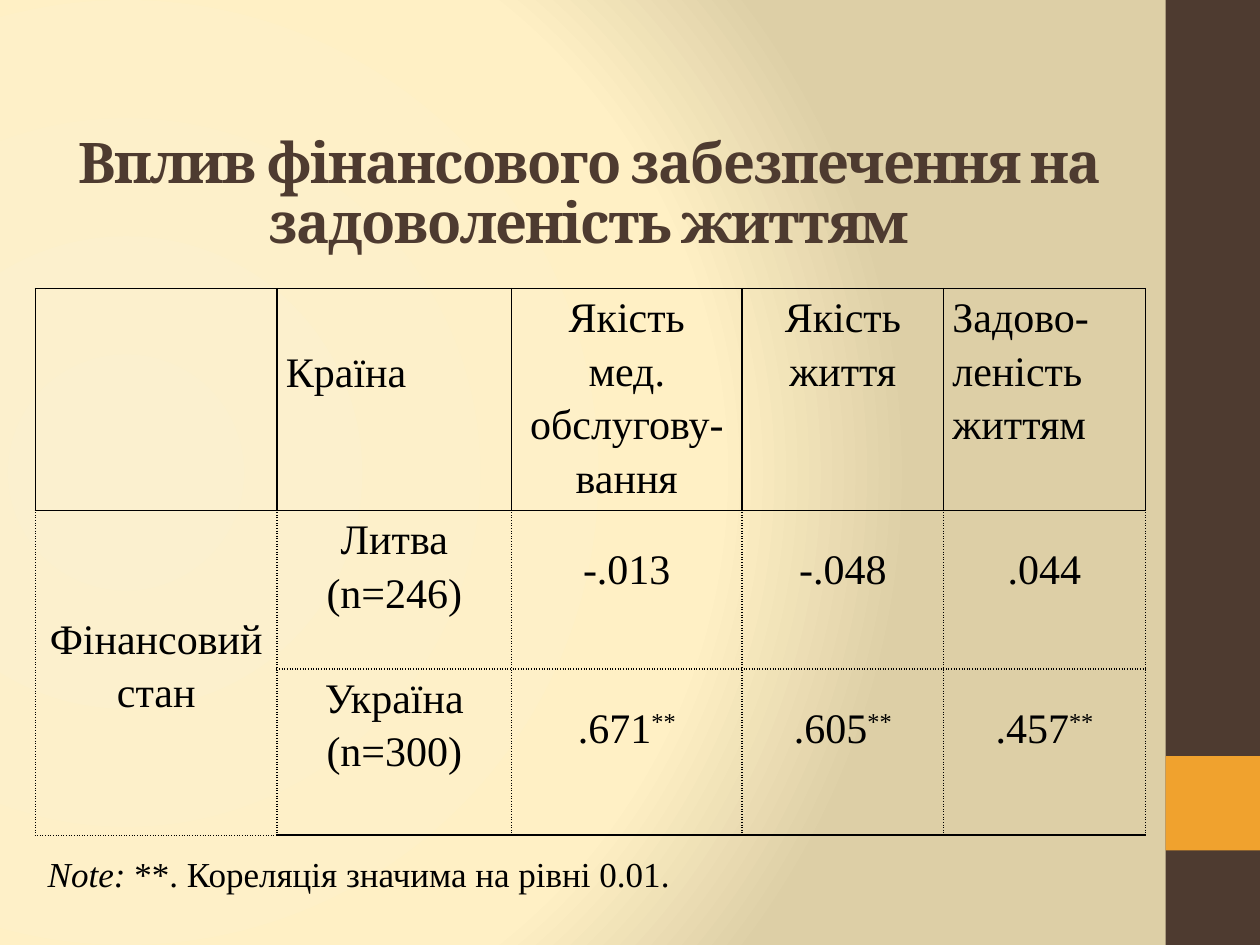
from dataclasses import dataclass
from lxml.etree import SubElement
from pptx import Presentation
from pptx.dml.color import RGBColor
from pptx.enum.shapes import MSO_SHAPE
from pptx.enum.text import MSO_ANCHOR, MSO_AUTO_SIZE, PP_ALIGN
from pptx.oxml import parse_xml
from pptx.oxml.ns import nsdecls, qn
from pptx.util import Inches, Pt


@dataclass
class Theme:
    brown: str = "4E3B30"
    gold: str = "F0A22E"
    ink: str = "000000"
    glow: tuple = ((0, "FBF0CF"), (75, "FFF0C5"), (100, "DDCFA6"))
    head: str = "Cambria"
    body: str = "Times New Roman"
    big: int = 32
    mid: int = 24
    small: int = 20


T = Theme()
W, H = 10, 7.5
LEFT, TOP = 0.28, 2.29
COLS = [1.92, 1.86, 1.83, 1.6, 1.6]
ROWS = [1.76, 1.26, 1.32]
TITLE = "Вплив фінансового забезпечення на задоволеність життям"
NOTE = ["Note:", " **. Кореляція значима на рівні 0.01."]
GRID = [
    ["", "Країна", "Якість\vмед. обслугову-вання", "Якість життя",
     "Задово-леність життям"],
    ["Фінансовий стан", "Литва\n(n=246)", "-.013", "-.048", ".044"],
    ["", "Україна (n=300)", ".671**", ".605**", ".457**"],
]
DROP = {(0, 1): 0.43, (1, 0): 0.79}
FLUSH = [(0, 1), (0, 4)]


def style(run, font, size, color):
    run.font.name = font
    run.font.size = Pt(size)
    run.font.color.rgb = RGBColor.from_string(color)


def box(*sides):
    return [Inches(side) for side in sides]


def paint(slide):
    slide.background.fill.solid()
    back = slide.element.xpath(".//p:bgPr")[0]
    stops = "".join(
        f'<a:gs pos="{pos * 1000}"><a:srgbClr val="{color}"/></a:gs>'
        for pos, color in T.glow)
    back.replace(back[0], parse_xml(
        f'<a:gradFill {nsdecls("a")} rotWithShape="1"><a:gsLst>{stops}</a:gsLst>'
        '<a:path path="circle"><a:fillToRect l="20000" t="50000" r="100000" '
        'b="50000"/></a:path></a:gradFill>'))


def block(slide, place, color):
    shape = slide.shapes.add_shape(MSO_SHAPE.RECTANGLE, *box(*place))
    shape.shadow.inherit = False
    shape.fill.solid()
    shape.fill.fore_color.rgb = RGBColor.from_string(color)
    shape.line.fill.background()


def edge(cell, row):
    last = len(ROWS) - 1
    side = "sysDot" if row else "solid"
    kinds = {
        "L": (1, side),
        "R": (1, side),
        "T": (1, "sysDot" if row == last else "solid"),
        "B": (1.5, "solid") if row == last else (1, "sysDot" if row else "solid"),
    }
    props = cell._tc.get_or_add_tcPr()
    for name, (width, dash) in kinds.items():
        line = SubElement(props, qn("a:ln" + name), w=str(Pt(width)))
        fill = SubElement(line, qn("a:solidFill"))
        SubElement(fill, qn("a:srgbClr"), val=T.ink)
        SubElement(line, qn("a:prstDash"), val=dash)


def write(cell, text, row, col):
    value = row > 0 and col > 1
    cell.margin_left = cell.margin_right = Inches(0.07)
    cell.margin_top = Inches(0.44 if value else DROP.get((row, col), 0))
    cell.margin_bottom = 0
    cell.vertical_anchor = MSO_ANCHOR.TOP
    plain = text.rstrip("*")
    cell.text_frame.text = plain
    for para in cell.text_frame.paragraphs:
        para.alignment = PP_ALIGN.LEFT if (row, col) in FLUSH else PP_ALIGN.CENTER
        para.line_spacing = Pt(16) if value else 1.15
        if plain != text:
            star = para.add_run()
            star.text = text[len(plain):]
            star.font._element.set("baseline", "30000")
        for run in para.runs:
            style(run, T.body, T.mid, T.ink)


def main():
    deck = Presentation()
    deck.slide_width, deck.slide_height = box(W, H)
    slide = deck.slides.add_slide(deck.slide_layouts[5])
    paint(slide)
    block(slide, (W - 0.75, 0, 0.75, H), T.brown)
    block(slide, (W - 0.75, H * 0.8, 0.75, 0.75), T.gold)

    title = slide.shapes.title
    title.left, title.top, title.width, title.height = box(0.51, 1.07, 8.33, 1.18)
    frame = title.text_frame
    frame.text = TITLE
    frame.word_wrap = True
    frame.auto_size = MSO_AUTO_SIZE.NONE
    frame.vertical_anchor = MSO_ANCHOR.TOP
    frame.margin_top = frame.margin_bottom = 0
    frame.margin_left = frame.margin_right = Inches(0.05)
    para = frame.paragraphs[0]
    para.alignment = PP_ALIGN.CENTER
    para.line_spacing = 0.9
    run = para.runs[0]
    style(run, T.head, T.big, T.brown)
    run.font.bold = True
    run.font._element.set("spc", "-100")

    table = slide.shapes.add_table(
        len(ROWS), len(COLS), *box(LEFT, TOP, sum(COLS), sum(ROWS))).table
    table.first_row = table.horz_banding = False
    for col, width in zip(table.columns, COLS):
        col.width = Inches(width)
    for row, height in zip(table.rows, ROWS):
        row.height = Inches(height)
    table.cell(1, 0).merge(table.cell(2, 0))
    for row, line in enumerate(GRID):
        for col, text in enumerate(line):
            cell = table.cell(row, col)
            write(cell, text, row, col)
            edge(cell, row)
            cell.fill.background()

    note = slide.shapes.add_textbox(*box(LEFT, 6.71, 5.18, 0.44)).text_frame
    note.word_wrap = False
    note.vertical_anchor = MSO_ANCHOR.MIDDLE
    for spot, text in enumerate(NOTE):
        run = note.paragraphs[0].add_run()
        run.text = text
        style(run, T.body, T.small, T.ink)
        run.font.italic = spot == 0

    deck.save("out.pptx")


if __name__ == "__main__":
    main()
